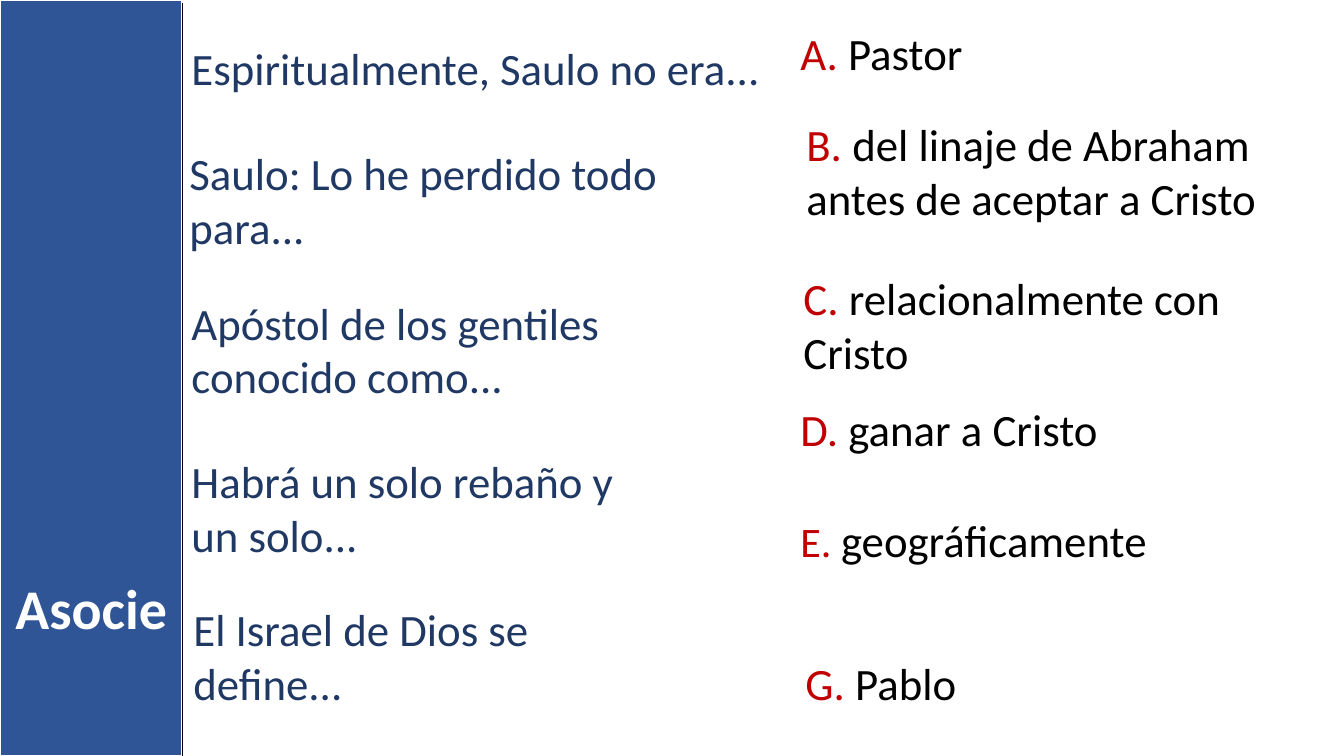
from collections import namedtuple
from dataclasses import dataclass

from lxml.etree import SubElement
from pptx import Presentation
from pptx.dml.color import RGBColor
from pptx.enum.shapes import MSO_CONNECTOR as Connector, MSO_SHAPE as Shape
from pptx.enum.text import MSO_AUTO_SIZE as AutoSize, PP_ALIGN as Align
from pptx.oxml.ns import qn
from pptx.util import Pt

PX = 9144  # EMU per px, 100 px to the inch

Box = namedtuple("Box", "left top width height")


@dataclass(frozen=True)
class Theme:
    font: str = "Calibri"
    bar: RGBColor = RGBColor(0x2F, 0x55, 0x97)
    prompt: RGBColor = RGBColor(0x20, 0x38, 0x64)
    letter: RGBColor = RGBColor(0xC0, 0x00, 0x00)
    black: RGBColor = RGBColor(0x00, 0x00, 0x00)
    white: RGBColor = RGBColor(0xFF, 0xFF, 0xFF)
    body_size: int = 32
    small_size: int = 30
    title_size: int = 40


THEME = Theme()
ONE_LINE, TWO_LINES = 64, 118

# Text, then left, top, width and height within the column
PROMPTS = [
    ("Espiritualmente, Saulo no era...", Box(2, 35, 591, ONE_LINE)),
    ("Saulo: Lo he perdido todo para...", Box(0, 140, 534, TWO_LINES)),
    ("Apóstol de los gentiles conocido como...", Box(2, 288, 489, TWO_LINES)),
    ("Habrá un solo rebaño y un solo...", Box(2, 445, 460, TWO_LINES)),
    ("El Israel de Dios se define...", Box(4, 592, 441, TWO_LINES)),
]
ANSWERS = [
    ("A", "Pastor", THEME.body_size, Box(0, 21, 516, ONE_LINE)),
    ("B", "del linaje de Abraham antes de aceptar a Cristo",
     THEME.body_size, Box(6, 111, 503, TWO_LINES)),
    ("C", "relacionalmente con Cristo", THEME.body_size, Box(3, 264, 502, TWO_LINES)),
    ("D", "ganar a Cristo", THEME.body_size, Box(0, 394, 508, ONE_LINE)),
    ("E", "geográficamente", THEME.small_size, Box(0, 504, 472, ONE_LINE)),
    ("G", "Pablo", THEME.body_size, Box(5, 646, 495, ONE_LINE)),
]


def scaled(lengths):
    return [length * PX for length in lengths]


def within(region, box):
    """Turn a box measured from the region's corner into a slide box."""
    return Box(region.left + box.left, region.top + box.top, box.width, box.height)


def add_text(slide, box, spans, align=Align.LEFT):
    """Add one paragraph; each span is its text and a dict of font values."""
    frame = slide.shapes.add_textbox(*scaled(box)).text_frame
    frame.word_wrap = True
    frame.auto_size = AutoSize.SHAPE_TO_FIT_TEXT
    para = frame.paragraphs[0]
    para.alignment = align
    for text, (color, values) in spans:
        span = para.add_run()
        span.text = text
        span.font.color.rgb = color
        for name, value in ({"name": THEME.font} | values).items():
            setattr(span.font, name, value)


def add_side_bar(slide, box):
    bar = slide.shapes.add_shape(Shape.RECTANGLE, *scaled(box))
    bar.shadow.inherit = False
    bar.fill.solid()
    bar.fill.fore_color.rgb = THEME.bar
    bar.line.color.rgb = THEME.white
    bar.line.width = Pt(1.5)
    title_style = (THEME.white, {"size": Pt(THEME.title_size), "bold": True})
    add_text(slide, within(box, Box(0, 564, box.width, 77)),
             [("Asocie", title_style)], Align.CENTER)


def add_bar_edge(slide, box):
    right = box.left + box.width
    edge = slide.shapes.add_connector(
        Connector.STRAIGHT,
        *scaled((right, box.top + 3, right, box.top + box.height)))
    edge.line.color.rgb = THEME.black
    edge.line.width = Pt(1)
    SubElement(edge.element.spPr, qn("a:effectLst"))


def add_prompts(slide, region):
    style = (THEME.prompt, {"size": Pt(THEME.body_size)})
    for text, box in PROMPTS:
        add_text(slide, within(region, box), [(text, style)])


def add_answers(slide, region):
    answer_style = (THEME.black, {"size": Pt(THEME.body_size)})
    for letter, text, letter_size, box in ANSWERS:
        letter_style = (THEME.letter, {"size": Pt(letter_size)})
        add_text(slide, within(region, box),
                 [(f"{letter}. ", letter_style), (text, answer_style)])


def add_matching_slide(deck, page):
    slide = deck.slides.add_slide(deck.slide_layouts[6])
    bar = Box(page.left, page.top, 181, page.height)
    add_side_bar(slide, bar)
    add_prompts(slide, Box(178, page.top, 593, page.height))
    add_answers(slide, Box(784, page.top, 516, page.height))
    add_bar_edge(slide, bar)


def main():
    page = Box(0, 0, 1333, 750)
    deck = Presentation()
    deck.slide_width, deck.slide_height = scaled((page.width, page.height))
    add_matching_slide(deck, page)
    deck.save("out.pptx")


if __name__ == "__main__":
    main()
